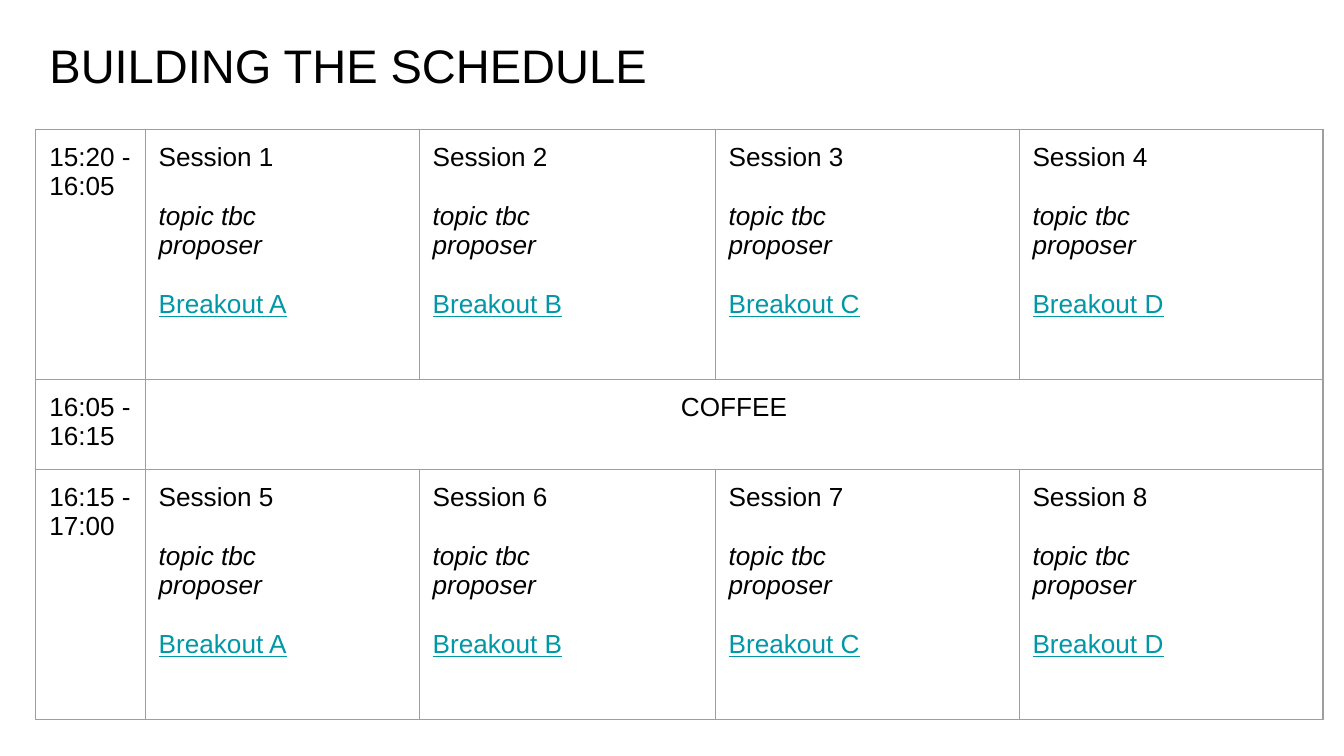
from pptx import Presentation
from pptx.dml.color import RGBColor
from pptx.enum.text import MSO_ANCHOR as Anchor, PP_ALIGN as Align
from pptx.oxml import parse_xml
from pptx.oxml.ns import nsdecls
from pptx.util import Pt

BLACK = RGBColor(0x00, 0x00, 0x00)
TEAL = RGBColor(0x00, 0x97, 0xA7)
GREY = RGBColor(0x9E, 0x9E, 0x9E)

PAD = {f"margin_{side}": Pt(7.2) for side in ("left", "right", "top", "bottom")}
BODY = {"name": "Arial", "size": Pt(14), "italic": False, "underline": False}
TITLE = BODY | {"size": Pt(25.2)}
TOPIC = BODY | {"italic": True}
ROOM = BODY | {"underline": True}

COLS = (58.6, 146.8, 158.6, 162.8, 162.8)
ROWS = (134, 48.2, 134)
TIMES = ("15:20 - 16:05", "16:05 - 16:15", "16:15 - 17:00")
ROOMS = "ABCD"
GAP = 15.75


def apply(item, form):
    """Set each attribute of the item from a dict."""
    for key, value in form.items():
        setattr(item, key, value)


def write(frame, lines, align=Align.LEFT):
    """Fill a text frame with lines of (text, format, colour, space before)."""
    for i, (text, form, color, gap) in enumerate(lines):
        para = frame.add_paragraph() if i else frame.paragraphs[0]
        apply(para, {"alignment": align, "space_before": Pt(gap)})
        run = para.add_run()
        run.text = text
        apply(run.font, form)
        run.font.color.rgb = color


def border(cell):
    """Draw a thin grey line on all four sides of a cell."""
    props = cell._tc.get_or_add_tcPr()
    for i, side in enumerate("LRTB"):
        props.insert(i, parse_xml(
            f'<a:ln{side} {nsdecls("a")} w="{Pt(0.75)}"><a:solidFill>'
            f'<a:srgbClr val="{GREY}"/></a:solidFill></a:ln{side}>'))


def session(num, room):
    """Return the lines of one session cell."""
    return [(f"Session {num}", BODY, BLACK, 0),
            ("topic tbc", TOPIC, BLACK, GAP),
            ("proposer", TOPIC, BLACK, 0),
            (f"Breakout {room}", ROOM, TEAL, GAP)]


def heading(slide, left, top, width, height):
    """Place the slide title in the given box."""
    frame = slide.shapes.add_textbox(
        Pt(left), Pt(top), Pt(width), Pt(height)).text_frame
    apply(frame, PAD | {"word_wrap": True, "vertical_anchor": Anchor.TOP})
    write(frame, [("BUILDING THE SCHEDULE", TITLE, BLACK, 0)])


def schedule(slide, left, top):
    """Place the timetable with its corner at the given point."""
    table = slide.shapes.add_table(
        len(ROWS), len(COLS), Pt(left), Pt(top),
        Pt(sum(COLS)), Pt(sum(ROWS))).table
    apply(table, {"first_row": False, "horz_banding": False})
    for col, width in zip(table.columns, COLS):
        col.width = Pt(width)
    for row, height in zip(table.rows, ROWS):
        row.height = Pt(height)
    for cell in table.iter_cells():
        apply(cell, PAD)
        cell.fill.background()
        border(cell)
    for r, time in enumerate(TIMES):
        write(table.cell(r, 0).text_frame, [(time, BODY, BLACK, 0)])
    for r, first in ((0, 1), (2, 5)):
        for c, room in enumerate(ROOMS):
            write(table.cell(r, c + 1).text_frame, session(first + c, room))
    pause = table.cell(1, 1)
    pause.merge(table.cell(1, 4))
    write(pause.text_frame, [("COFFEE", BODY, BLACK, 0)], Align.CENTER)


def main():
    """Build the slide and save it."""
    deck = Presentation()
    apply(deck, {"slide_width": Pt(720), "slide_height": Pt(405)})
    slide = deck.slides.add_slide(deck.slide_layouts[6])
    heading(slide, 19.4, 12.2, 671, 45.4)
    schedule(slide, 19.2, 69.2)
    deck.save("out.pptx")


if __name__ == "__main__":
    main()
